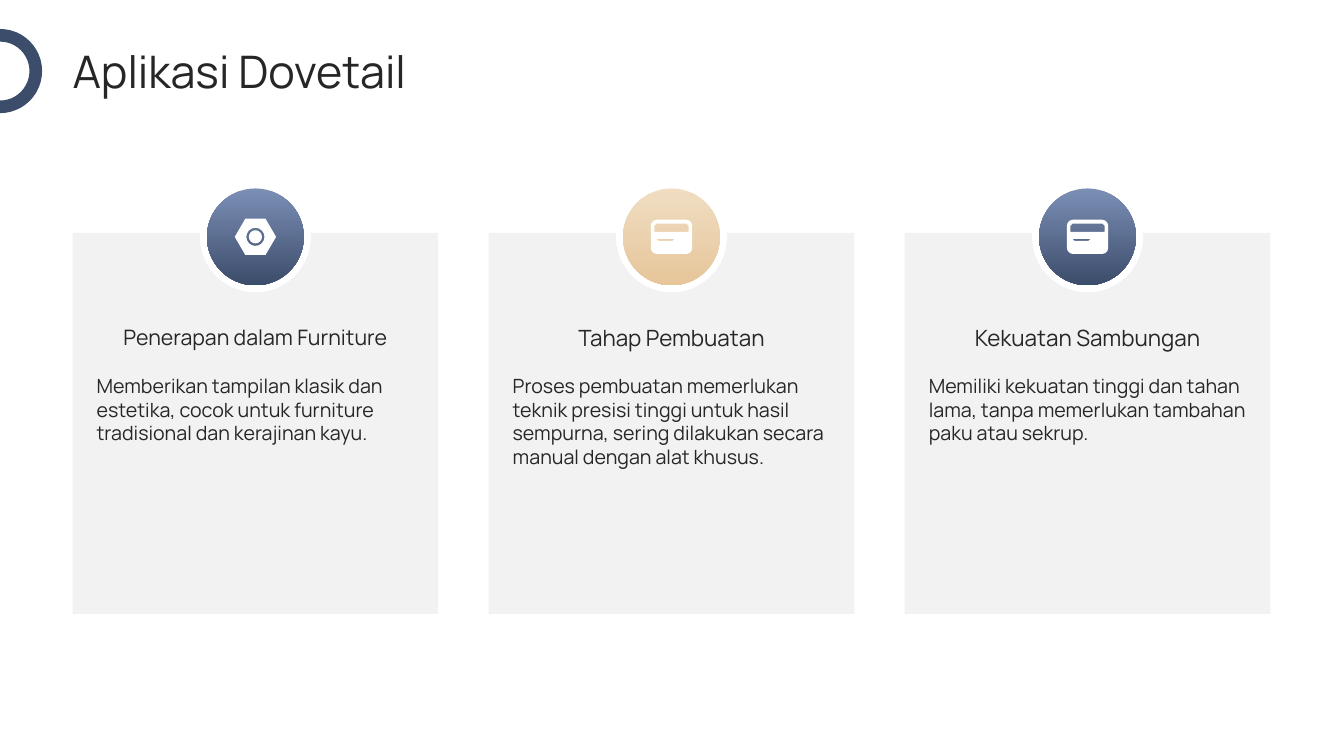
from dataclasses import dataclass
from math import cos, radians, sin

from pptx import Presentation
from pptx.dml.color import RGBColor
from pptx.enum.shapes import MSO_SHAPE
from pptx.enum.text import MSO_ANCHOR, MSO_AUTO_SIZE, PP_ALIGN
from pptx.util import Inches, Pt

FONT = "Manrope"
INK, NAVY, PANEL, WHITE = "262626", "3C4C6B", "F2F2F2", "FFFFFF"
BLUE_FADE = ("7B8FB5", NAVY)
SAND_FADE = ("F0DDC2", "E6C69A")
LEFT, CONTENT_W, GAP, CARD_TOP, CARD_H = 0.72, 11.88, 0.5, 2.31, 3.78
PITCH = (CONTENT_W + GAP) / 3
CARD_W = PITCH - GAP
TEXT_W, ICON_Y, RING = 3.15, 2.35, 0.71

Contour = list[tuple[float, float]]


@dataclass
class Card:
    heading: str
    heading_size: float
    body: str
    fade: tuple[str, str]
    icon: list[Contour]


def color(value: str) -> RGBColor:
    return RGBColor.from_string(value)


def arc(cx: float, cy: float, r: float, start: float, sweep: float, steps: int) -> Contour:
    angles = [radians(start + sweep * i / steps) for i in range(steps + 1)]
    return [(cx + r * cos(a), cy + r * sin(a)) for a in angles]


def circle(r: float) -> Contour:
    return arc(0, 0, r, 0, 337.5, 15)


def corner(cx: float, cy: float, r: float, start: float) -> Contour:
    return arc(cx, cy, r, start, 90, 3 if r > 0.03 else 1) if r else [(cx, cy)]


def rounded(x: float, y: float, w: float, h: float, top: float, bottom: float) -> Contour:
    right, base = x + w, y + h
    return (corner(x + top, y + top, top, 180)
            + corner(right - top, y + top, top, 270)
            + corner(right - bottom, base - bottom, bottom, 0)
            + corner(x + bottom, base - bottom, bottom, 90))


NUT = [
    [(-0.1, -0.18), (0.1, -0.18), (0.205, 0), (0.1, 0.18), (-0.1, 0.18), (-0.205, 0)],
    circle(0.09),
    circle(0.065),
]
WALLET = [
    rounded(-0.205, -0.17, 0.41, 0.34, 0.06, 0.06),
    rounded(-0.17, -0.13, 0.34, 0.08, 0.02, 0),
    rounded(-0.15, 0.02, 0.18, 0.02, 0, 0.02),
]

CARDS = [
    Card("Penerapan dalam Furniture", 15.2,
         "Memberikan tampilan klasik dan estetika, cocok untuk furniture "
         "tradisional dan kerajinan kayu.", BLUE_FADE, NUT),
    Card("Tahap Pembuatan", 16,
         "Proses pembuatan memerlukan teknik presisi tinggi untuk hasil sempurna, "
         "sering dilakukan secara manual dengan alat khusus.", SAND_FADE, WALLET),
    Card("Kekuatan Sambungan", 16,
         "Memiliki kekuatan tinggi dan tahan lama, tanpa memerlukan tambahan "
         "paku atau sekrup.", BLUE_FADE, WALLET),
]


def place(s, x: float, y: float, w: float, h: float) -> None:
    s.left, s.top, s.width, s.height = Inches(x), Inches(y), Inches(w), Inches(h)


def add_shape(slide, kind, x: float, y: float, w: float, h: float, fill: str = ""):
    s = slide.shapes.add_shape(kind, Inches(x), Inches(y), Inches(w), Inches(h))
    s.shadow.inherit = False
    s.line.fill.background()
    if fill:
        s.fill.solid()
        s.fill.fore_color.rgb = color(fill)
    else:
        s.fill.background()
    return s


def add_disc(slide, cx: float, size: float, fill: str = WHITE):
    return add_shape(slide, MSO_SHAPE.OVAL, cx - size / 2, ICON_Y - size / 2, size, size, fill)


def add_icon(slide, cx: float, contours: list[Contour]) -> None:
    points = [[(Inches(cx + x), Inches(ICON_Y + y)) for x, y in c] for c in contours]
    builder = slide.shapes.build_freeform(*points[0][0])
    builder.add_line_segments(points[0][1:], close=True)
    for hole in points[1:]:
        builder.move_to(*hole[0])
        builder.add_line_segments(hole[1:], close=True)
    s = builder.convert_to_shape()
    s.shadow.inherit = False
    s.line.fill.background()
    s.fill.solid()
    s.fill.fore_color.rgb = color(WHITE)


def write(s, text: str, size: float, align=PP_ALIGN.LEFT, anchor=MSO_ANCHOR.MIDDLE) -> None:
    tf = s.text_frame
    tf.text = text
    tf.word_wrap = True
    tf.auto_size = MSO_AUTO_SIZE.NONE
    tf.vertical_anchor = anchor
    tf.margin_left = tf.margin_top = tf.margin_right = tf.margin_bottom = 0
    p = tf.paragraphs[0]
    p.alignment = align
    r = p.runs[0]
    r.font.name, r.font.size = FONT, Pt(size)
    r.font.color.rgb = color(INK)


def add_text(slide, x: float, y: float, h: float, text: str, size: float, align, anchor) -> None:
    s = slide.shapes.add_textbox(Inches(x), Inches(y), Inches(TEXT_W), Inches(h))
    write(s, text, size, align, anchor)


def add_card(slide, card: Card, x: float) -> None:
    cx = x + CARD_W / 2
    text_x = cx - TEXT_W / 2
    add_shape(slide, MSO_SHAPE.RECTANGLE, x, CARD_TOP, CARD_W, CARD_H, PANEL)
    add_disc(slide, cx, 1.1)
    badge = add_disc(slide, cx, 0.96)
    badge.fill.gradient()
    badge.fill.gradient_angle = 270
    for stop, value in zip(badge.fill.gradient_stops, card.fade):
        stop.color.rgb = color(value)
    add_icon(slide, cx, card.icon)
    add_text(slide, text_x, 3.17, 0.35, card.heading, card.heading_size,
             PP_ALIGN.CENTER, MSO_ANCHOR.MIDDLE)
    add_text(slide, text_x, 3.71, 2.17, card.body, 14, PP_ALIGN.LEFT, MSO_ANCHOR.TOP)


def main() -> None:
    prs = Presentation()
    prs.slide_width, prs.slide_height = Inches(13.33), Inches(7.5)
    slide = prs.slides.add_slide(prs.slide_layouts[5])
    title = slide.shapes.title
    place(title, LEFT, 0.47, CONTENT_W, 0.47)
    write(title, "Aplikasi Dovetail", 32)
    for i, card in enumerate(CARDS):
        add_card(slide, card, LEFT + i * PITCH)
    ring = add_shape(slide, MSO_SHAPE.OVAL, -RING / 2, 0.35, RING, RING)
    ring.line.color.rgb = color(NAVY)
    ring.line.width = Pt(9)
    prs.save("out.pptx")


if __name__ == "__main__":
    main()
